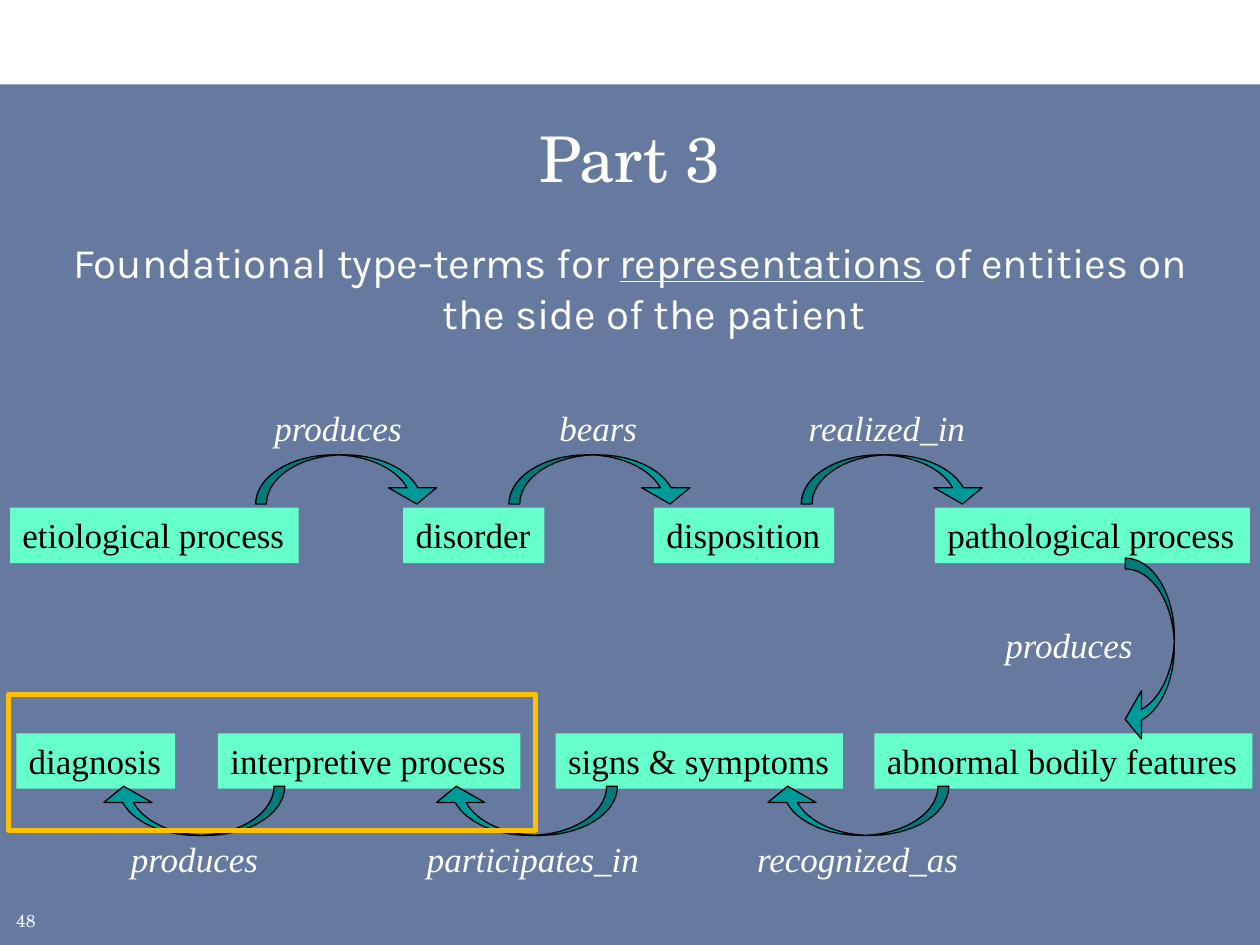
"""Build the Part 3 slide: a chain of clinical terms linked by relations."""
from typing import NamedTuple

from lxml.etree import SubElement
from pptx import Presentation
from pptx.dml.color import RGBColor as Rgb
from pptx.enum.shapes import MSO_SHAPE as Kind
from pptx.enum.text import MSO_ANCHOR as Anchor, MSO_AUTO_SIZE as Auto, PP_ALIGN as Align
from pptx.oxml.ns import qn
from pptx.util import Inches, Pt


class Theme(NamedTuple):
    navy: Rgb = Rgb.from_string("002060")
    mint: Rgb = Rgb.from_string("66FFCC")
    teal: Rgb = Rgb.from_string("009999")
    gold: Rgb = Rgb.from_string("FFC000")
    white: Rgb = Rgb.from_string("FFFFFF")
    black: Rgb = Rgb.from_string("000000")
    serif: str = "TeX Gyre Schola"
    sans: str = "Karla"
    roman: str = "Times New Roman"
    title: int = 36
    body: int = 24
    term: int = 20
    small: int = 10


class Area(NamedTuple):
    left: float
    top: float
    width: float
    height: float


class Word(NamedTuple):
    text: str
    left: float
    width: float


class Line(NamedTuple):
    top: float
    words: tuple[Word, ...]


class Bow(NamedTuple):
    left: float
    top: float
    turn: int = 0


LOOK = Theme()
ROW = 0.44
HANG = 0.38
TERMS = (
    Line(4.03, (
        Word("etiological process", 0.08, 2.29),
        Word("disorder", 3.2, 1.12),
        Word("disposition", 5.19, 1.43),
        Word("pathological process", 7.42, 2.5),
    )),
    Line(5.82, (
        Word("diagnosis", 0.13, 1.26),
        Word("interpretive process", 1.73, 2.4),
        Word("signs & symptoms", 4.41, 2.28),
        Word("abnormal bodily features", 6.94, 3),
    )),
)
LINKS = (
    Line(3.18, (
        Word("produces", 2.08, 1.22),
        Word("bears", 4.34, 0.82),
        Word("realized_in", 6.32, 1.45),
    )),
    Line(4.9, (Word("produces", 7.88, 1.22),)),
    Line(6.6, (
        Word("produces", 0.94, 1.22),
        Word("participates_in", 3.29, 1.9),
        Word("recognized_as", 5.91, 1.81),
    )),
)
BOWS = (
    *(Bow(left, 3.61) for left in (2.03, 4.04, 6.36)),
    *(Bow(left, 6.24, 180) for left in (0.79, 3.43, 6.06)),
    Bow(8.39, 4.97, 90),
)


def place(area: Area) -> list[int]:
    """Turn an area into slide lengths."""
    return [Inches(side) for side in area]


def add_form(slide, kind: Kind, area: Area, fill: Rgb | None = None,
             line: Rgb | None = None, weight: float = 0.75):
    """Draw a flat preset shape."""
    shape = slide.shapes.add_shape(kind, *place(area))
    shape.shadow.inherit = False
    if fill is None:
        shape.fill.background()
    else:
        shape.fill.solid()
        shape.fill.fore_color.rgb = fill
    if line is None:
        shape.line.fill.background()
    else:
        shape.line.color.rgb = line
        shape.line.width = Pt(weight)
    return shape


def style(para, face: str, size: int, color: Rgb, slant: bool = False) -> None:
    """Set the font of a paragraph."""
    font = para.font
    font.name, font.size, font.italic = face, Pt(size), slant
    font.color.rgb = color


def add_text(slide, area: Area, parts: tuple[str, ...], face: str, size: int,
             align: Align = Align.LEFT, anchor: Anchor = Anchor.TOP, hang: float = 0):
    """Write one wrapped paragraph in parts and return it."""
    frame = slide.shapes.add_textbox(*place(area)).text_frame
    frame.word_wrap = True
    frame.vertical_anchor = anchor
    para = frame.paragraphs[0]
    para.alignment = align
    if hang:
        props = para._p.get_or_add_pPr()
        props.set("marL", str(Inches(hang)))
        props.set("indent", str(-Inches(hang)))
    for part in parts:
        para.add_run().text = part
    style(para, face, size, LOOK.white)
    return para


def add_words(slide, line: Line, boxed: bool) -> None:
    """Draw a row of boxed terms or of plain slanted links."""
    for word in line.words:
        area = Area(word.left, line.top, word.width, ROW)
        if boxed:
            shape = add_form(slide, Kind.RECTANGLE, area, LOOK.mint)
        else:
            shape = slide.shapes.add_textbox(*place(area))
        frame = shape.text_frame
        frame.word_wrap = False
        frame.auto_size = Auto.SHAPE_TO_FIT_TEXT
        frame.vertical_anchor = Anchor.TOP
        para = frame.paragraphs[0]
        para.add_run().text = word.text
        para.alignment = Align.LEFT
        style(para, LOOK.roman, LOOK.term, LOOK.black if boxed else LOOK.white, not boxed)


def add_bow(slide, bow: Bow) -> None:
    """Draw a curved arrow."""
    area = Area(bow.left, bow.top, 1.47, 0.39)
    shape = add_form(slide, Kind.CURVED_DOWN_ARROW, area, LOOK.teal, LOOK.black)
    shape.rotation = bow.turn
    for index, value in enumerate((0.22, 0.98, 0.33)):
        shape.adjustments[index] = value


def main() -> None:
    """Build and save the slide."""
    deck = Presentation()
    deck.slide_width, deck.slide_height = Inches(10), Inches(7.5)
    slide = deck.slides.add_slide(deck.slide_layouts[6])

    panel = add_form(slide, Kind.RECTANGLE, Area(0, 0.67, 10, 6.83), LOOK.navy)
    tint = panel._element.spPr.find(qn("a:solidFill"))[0]
    SubElement(tint, qn("a:alpha"), val="60000")

    add_text(slide, Area(0.03, 7.17, 0.39, 0.25), ("48",), LOOK.serif, LOOK.small, hang=HANG)
    add_text(slide, Area(0.25, 0.83, 9.5, 0.83), ("Part 3",), LOOK.serif, LOOK.title,
             Align.CENTER, Anchor.MIDDLE)
    parts = ("Foundational type-terms for ", "representations",
             " of entities on the side of the patient")
    body = add_text(slide, Area(0.25, 1.83, 9.5, 5.42), parts, LOOK.sans, LOOK.body,
                    Align.CENTER, hang=HANG)
    body.runs[1].font.underline = True

    for line in TERMS:
        add_words(slide, line, True)
    for line in LINKS:
        add_words(slide, line, False)
    for bow in BOWS:
        add_bow(slide, bow)
    add_form(slide, Kind.RECTANGLE, Area(0.07, 5.51, 4.18, 1.08), line=LOOK.gold, weight=3)
    deck.save("out.pptx")


if __name__ == "__main__":
    main()
